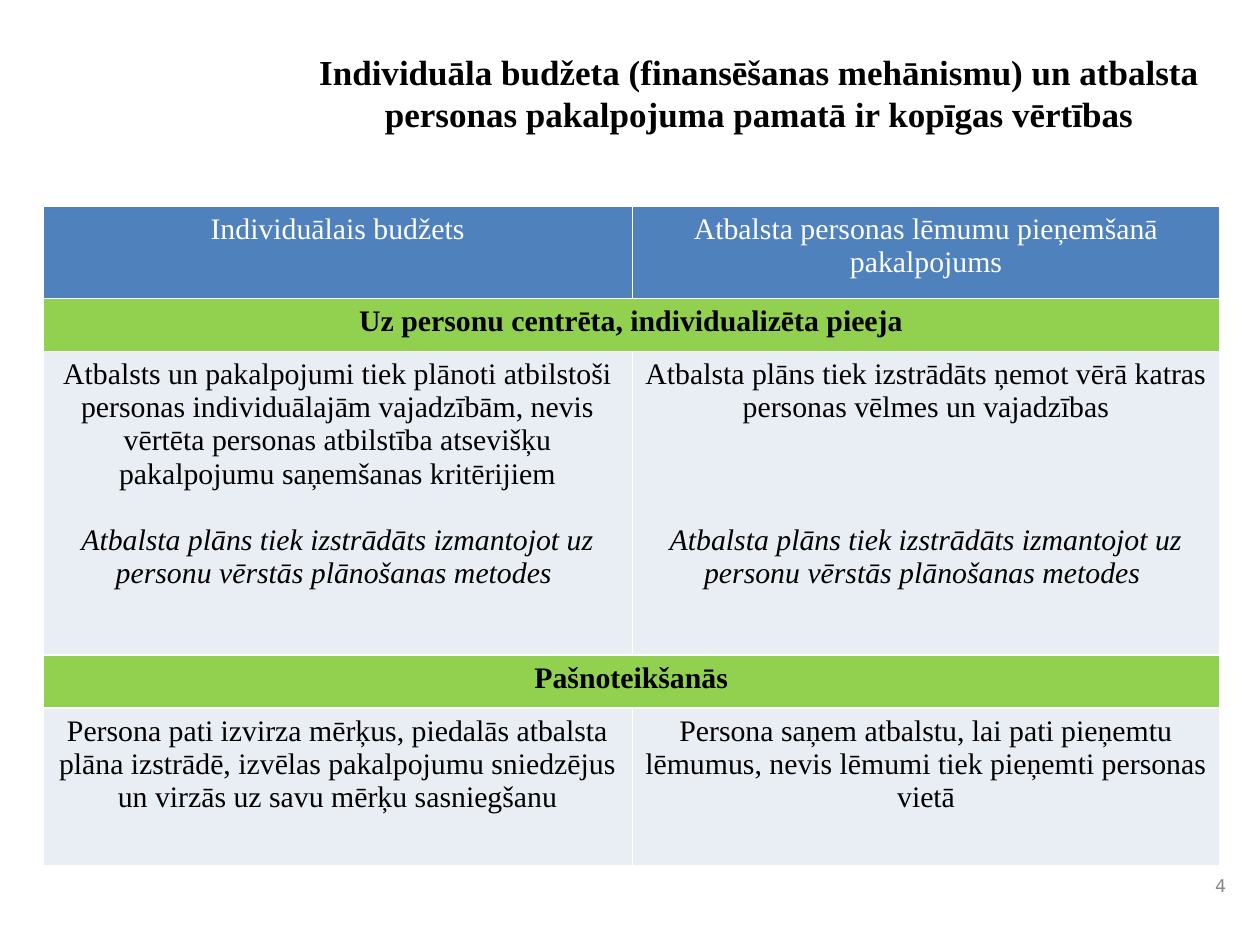
from dataclasses import dataclass

from lxml.etree import SubElement
from pptx import Presentation
from pptx.dml.color import RGBColor as RGB
from pptx.enum.text import MSO_ANCHOR as ANCHOR, PP_ALIGN as ALIGN
from pptx.oxml.ns import qn
from pptx.util import Inches, Pt


@dataclass(frozen=True)
class Theme:
    font: str = "Times New Roman"
    number_font: str = "DejaVu Sans"
    title_size: int = 20
    table_size: int = 17
    number_size: int = 10
    line_height: float = 18.9
    black: str = "000000"
    white: str = "FFFFFF"
    gray: str = "898989"
    header: str = "4F81BD"
    band: str = "92D050"
    body: str = "E9EDF4"


THEME = Theme()
TITLE = ("Individuāla budžeta (finansēšanas mehānismu) un atbalsta "
         "personas pakalpojuma pamatā ir kopīgas vērtības")
HEADERS = ["Individuālais budžets",
           "Atbalsta personas lēmumu pieņemšanā pakalpojums"]
PLAN_NOTE = ("Atbalsta plāns tiek izstrādāts izmantojot uz personu vērstās "
             "plānošanas metodes ")
PERSON_CENTRED = [
    "Atbalsts un pakalpojumi tiek plānoti atbilstoši personas individuālajām "
    "vajadzībām, nevis vērtēta personas atbilstība atsevišķu pakalpojumu "
    "saņemšanas kritērijiem",
    "Atbalsta plāns tiek izstrādāts ņemot vērā katras personas vēlmes un "
    "vajadzības",
]
NOTE_GAPS = [1, 3]  # lines of space above the note, per column
SELF_DETERMINATION = [
    "Persona pati izvirza mērķus, piedalās atbalsta plāna izstrādē, izvēlas "
    "pakalpojumu sniedzējus un virzās uz savu mērķu sasniegšanu",
    "Persona saņem atbalstu, lai pati pieņemtu lēmumus, nevis lēmumi tiek "
    "pieņemti personas vietā",
]
COLUMN_WIDTHS = [4.68, 4.66]
ROW_HEIGHTS = [0.73, 0.42, 2.41, 0.42, 1.25]


def write(p, text, size=THEME.table_size, color=THEME.black, font=THEME.font,
          align=ALIGN.CENTER, bold=False, italic=False, before=0):
    p.alignment = align
    p.space_before = Pt(before)
    r = p.add_run()
    r.text = text
    r.font.name = font
    r.font.size = Pt(size)
    r.font.color.rgb = RGB.from_string(color)
    r.font.bold = bold
    r.font.italic = italic


def style_cell(cell, fill):
    """Give a cell a solid fill and thin white borders."""
    tc_pr = cell._tc.get_or_add_tcPr()
    for side in ("lnL", "lnR", "lnT", "lnB"):
        ln = SubElement(tc_pr, qn(f"a:{side}"), w=str(Pt(1)))
        solid = SubElement(ln, qn("a:solidFill"))
        SubElement(solid, qn("a:srgbClr"), val=THEME.white)
    cell.fill.solid()
    cell.fill.fore_color.rgb = RGB.from_string(fill)


def add_title(s):
    sp = s.shapes.title
    sp.left, sp.top = Inches(2.37), Inches(0.35)
    sp.width, sp.height = Inches(7.31), Inches(0.95)
    tf = sp.text_frame
    tf.word_wrap = True
    tf.vertical_anchor = ANCHOR.TOP
    write(tf.paragraphs[0], TITLE, size=THEME.title_size, bold=True)


def add_number(s, number):
    sp = s.shapes.add_textbox(Inches(9.5), Inches(6.86),
                              Inches(0.33), Inches(0.33))
    tf = sp.text_frame
    tf.word_wrap = True
    tf.vertical_anchor = ANCHOR.MIDDLE
    write(tf.paragraphs[0], number, size=THEME.number_size, color=THEME.gray,
          font=THEME.number_font, align=ALIGN.RIGHT)


def fill_row(table, row, texts, fill, **fmt):
    for col, text in enumerate(texts):
        cell = table.cell(row, col)
        style_cell(cell, fill)
        write(cell.text_frame.paragraphs[0], text, **fmt)


def fill_band(table, row, text):
    """Write a section heading across both columns."""
    first, last = table.cell(row, 0), table.cell(row, 1)
    first.merge(last)
    for cell in (first, last):
        style_cell(cell, THEME.band)
    write(first.text_frame.paragraphs[0], text, bold=True)


def add_values_table(s):
    table = s.shapes.add_table(
        len(ROW_HEIGHTS), len(COLUMN_WIDTHS), Inches(0.34), Inches(1.64),
        Inches(sum(COLUMN_WIDTHS)), Inches(sum(ROW_HEIGHTS))).table
    for column, width in zip(table.columns, COLUMN_WIDTHS):
        column.width = Inches(width)
    for row, height in zip(table.rows, ROW_HEIGHTS):
        row.height = Inches(height)

    fill_row(table, 0, HEADERS, THEME.header, color=THEME.white)
    fill_band(table, 1, "Uz personu centrēta, individualizēta pieeja")
    fill_row(table, 2, PERSON_CENTRED, THEME.body)
    for col, lines in enumerate(NOTE_GAPS):
        p = table.cell(2, col).text_frame.add_paragraph()
        write(p, PLAN_NOTE, italic=True, before=lines * THEME.line_height)
    fill_band(table, 3, "Pašnoteikšanās")
    fill_row(table, 4, SELF_DETERMINATION, THEME.body)


def main():
    prs = Presentation()
    prs.slide_width, prs.slide_height = Inches(10), Inches(7.5)
    s = prs.slides.add_slide(prs.slide_layouts[5])
    add_number(s, "4")
    add_title(s)
    add_values_table(s)
    prs.save("out.pptx")


if __name__ == "__main__":
    main()
